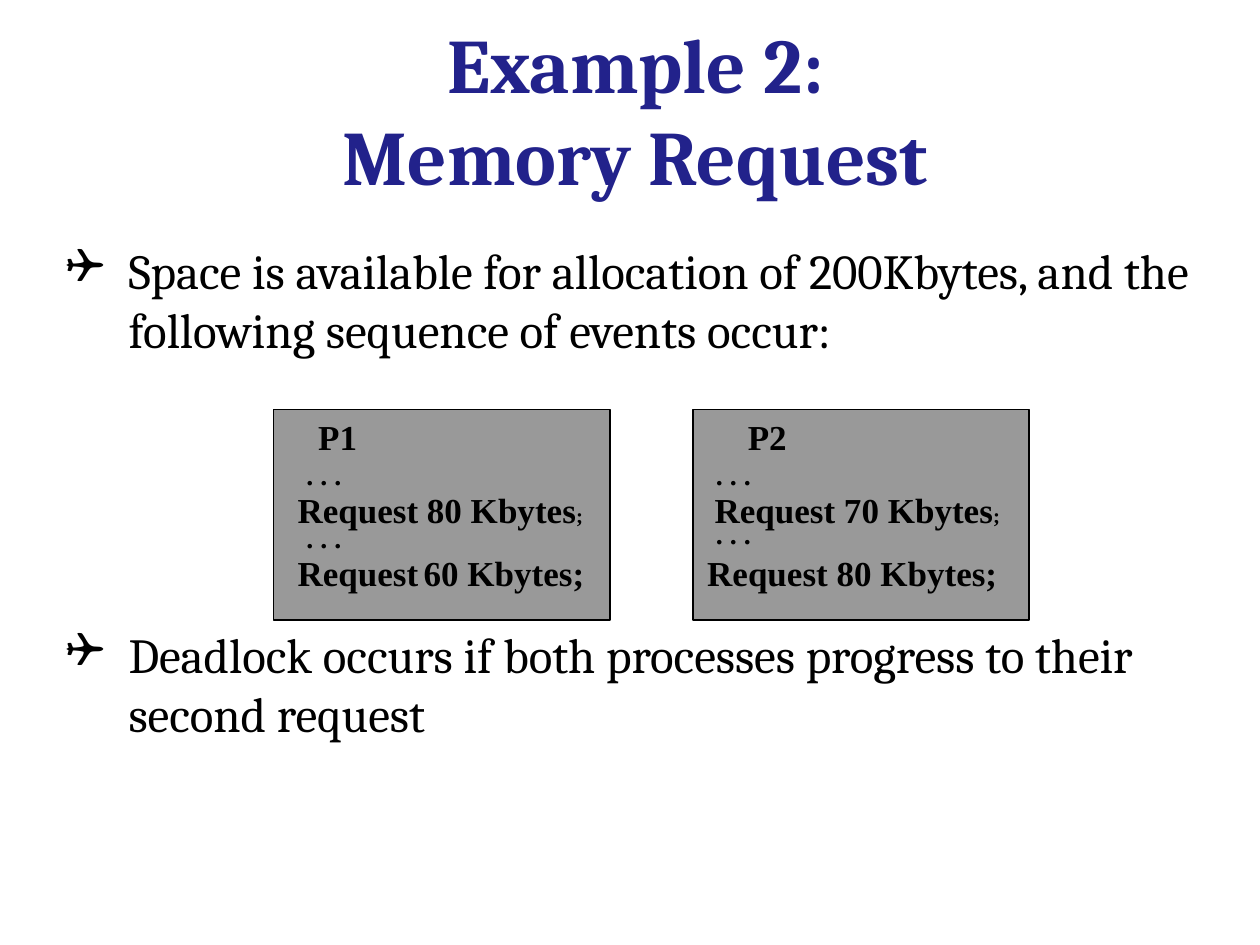
from lxml import etree
from pptx import Presentation
from pptx.dml.color import RGBColor
from pptx.enum import shapes, text
from pptx.oxml.ns import qn
from pptx.util import Inches, Pt

NAVY = RGBColor(0x22, 0x22, 0x8B)
BLACK = RGBColor(0, 0, 0)
GRAY = RGBColor(0x99, 0x99, 0x99)


def write(para, content, *, size, font="Times New Roman", color=BLACK, bold=True):
    for index, line in enumerate(content.split("\n")):
        if index:
            para.add_line_break()
        span = para.add_run()
        span.text = line
        span.font.size = Pt(size)
        span.font.name = font
        span.font.bold = bold
        span.font.color.rgb = color


def place(shape, left, top, width, height):
    shape.left, shape.top = Inches(left), Inches(top)
    shape.width, shape.height = Inches(width), Inches(height)


deck = Presentation()
deck.slide_width, deck.slide_height = Inches(10), Inches(7.5)
page = deck.slides.add_slide(deck.slide_layouts[1])

title = page.shapes.title
place(title, 0.38, 0.14, 9.33, 1.45)
title.text_frame.auto_size = text.MSO_AUTO_SIZE.NONE
title.text_frame.vertical_anchor = text.MSO_ANCHOR.MIDDLE
heading = title.text_frame.paragraphs[0]
heading.alignment = text.PP_ALIGN.CENTER
write(heading, "Example 2:\nMemory Request", size=44, font="Cambria", color=NAVY)

body = page.placeholders[1]
place(body, 0.42, 1.86, 9.25, 5.42)
body.text_frame.auto_size = text.MSO_AUTO_SIZE.NONE
points = [
    ("Space is available for allocation of 200Kbytes, and the following sequence of events occur:", 0),
    ("Deadlock occurs if both processes progress to their second request", 152),
]
for index, (point, gap) in enumerate(points):
    para = body.text_frame.add_paragraph() if index else body.text_frame.paragraphs[0]
    properties = para._p.get_or_add_pPr()
    properties.set("marL", str(Inches(0.5)))
    properties.set("indent", str(Inches(-0.5)))
    bullet_color = etree.SubElement(properties, qn("a:buClr"))
    etree.SubElement(bullet_color, qn("a:srgbClr"), val=str(BLACK))
    etree.SubElement(properties, qn("a:buFont"), typeface="Wingdings")
    etree.SubElement(properties, qn("a:buChar"), char="❑")
    para.space_before = Pt(gap)
    write(para, point, size=28, font="Cambria", bold=False)

processes = [
    (2.17, [
        (2.42, 3.25, 0.52, [("P1", 20)]),
        (2.33, 3.58, 0.48, [(". . .", 16)]),
        (2.33, 4.08, 0.48, [(". . .", 16)]),
        (2.25, 3.83, 2.49, [("Request 80 Kbytes", 20), (";", 12)]),
        (2.25, 4.33, 2.5, [("Request", 20), (" ", 12), ("60 Kbytes;", 20)]),
    ]),
    (5.5, [
        (5.83, 3.25, 0.52, [("P2", 20)]),
        (5.58, 3.58, 0.48, [(". . .", 16)]),
        (5.58, 4.05, 0.48, [(". . .", 16)]),
        (5.56, 3.83, 2.49, [("Request 70 Kbytes", 20), (";", 12)]),
        (5.5, 4.33, 2.53, [("Request 80 Kbytes;", 20)]),
    ]),
]
for panel_left, rows in processes:
    panel = page.shapes.add_shape(
        shapes.MSO_SHAPE.RECTANGLE, Inches(panel_left), Inches(3.25), Inches(2.67), Inches(1.67))
    panel.shadow.inherit = False
    panel.fill.solid()
    panel.fill.fore_color.rgb = GRAY
    panel.line.color.rgb = BLACK
    panel.line.width = Pt(1)
    for left, top, width, pieces in rows:
        height = 0.37 if pieces[0][1] == 16 else 0.44
        box = page.shapes.add_textbox(Inches(left), Inches(top), Inches(width), Inches(height))
        box.text_frame.word_wrap = False
        para = box.text_frame.paragraphs[0]
        para.alignment = text.PP_ALIGN.CENTER
        for content, size in pieces:
            write(para, content, size=size)

deck.save("out.pptx")
